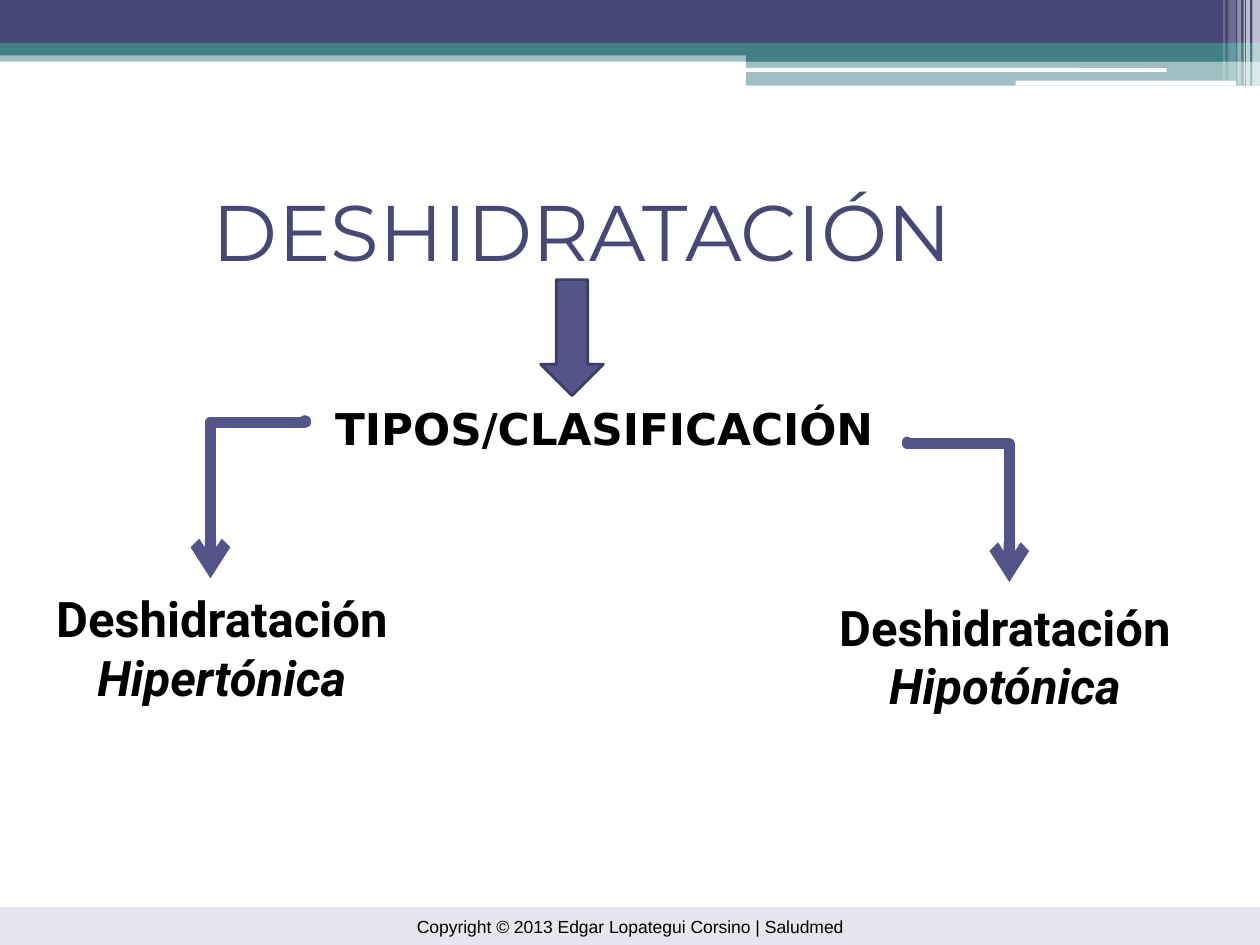
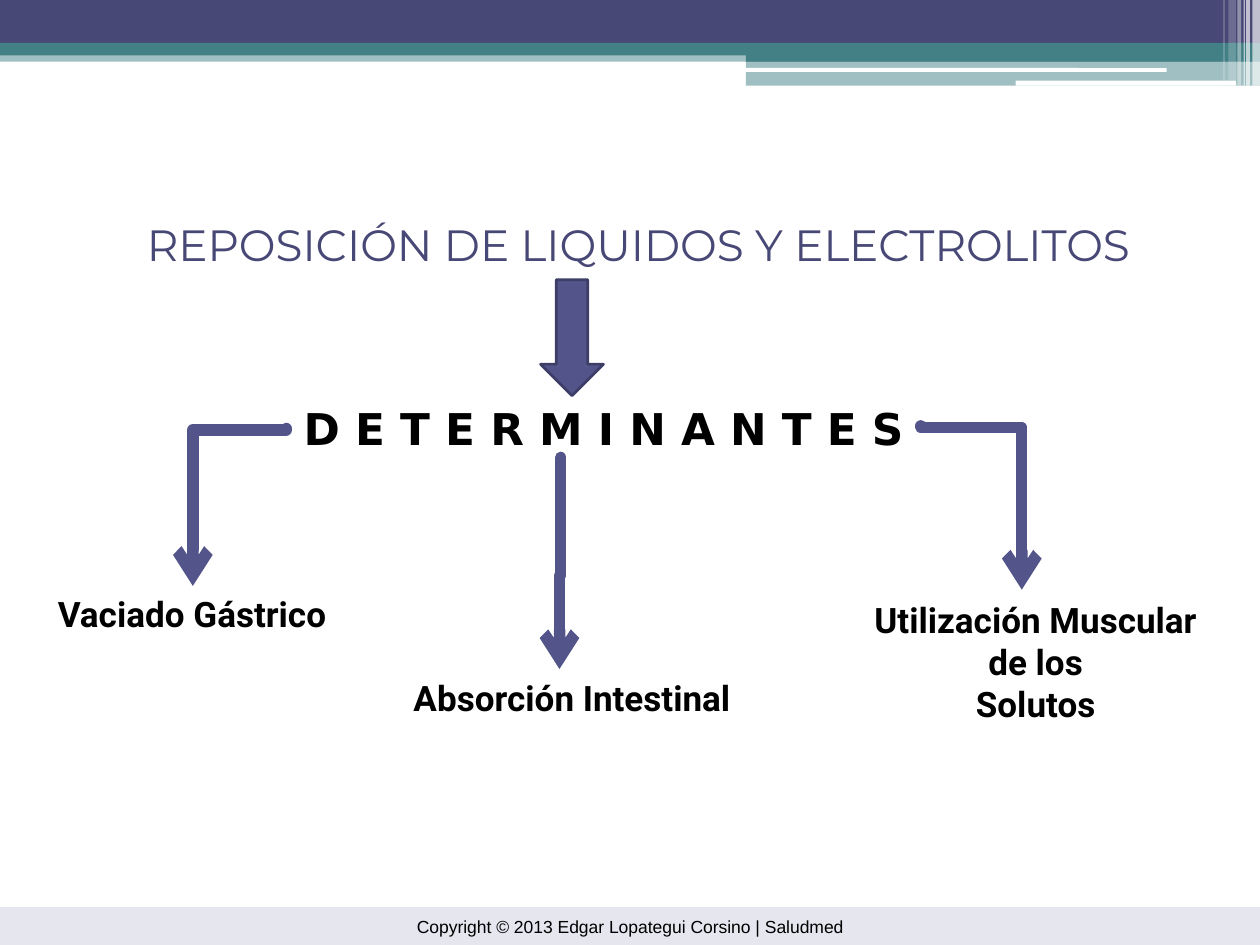
import pptx
import pptx.dml.color
import pptx.enum.shapes
import pptx.enum.text
import pptx.oxml
import pptx.oxml.ns
import pptx.util
from lxml import etree

Inches = pptx.util.Inches
Pt = pptx.util.Pt
qn = pptx.oxml.ns.qn
SHAPE = pptx.enum.shapes.MSO_SHAPE
ALIGN = pptx.enum.text.PP_ALIGN
ANCHOR = pptx.enum.text.MSO_ANCHOR
AUTO_SIZE = pptx.enum.text.MSO_AUTO_SIZE

INDIGO, TEAL, WHITE, BLACK = "484876", "438086", "FFFFFF", "000000"
ARROW, ARROW_EDGE, FOOTER_BAND = "53548A", "3D3E66", "E6E6EF"
COPYRIGHT = "Copyright © 2013 Edgar Lopategui Corsino | Saludmed"

TITLE = {"name": "Montserrat", "bold": False}
HEADING = {"name": "DejaVu Sans", "size": Pt(25), "bold": True}
BRANCH = {"name": "Roboto", "bold": True}
FOOTER = {"name": "Arial", "size": Pt(10)}

# left, top, width, height, colour, opacity in percent
BANDS = [
    (0, 0.4, 10, 0.09, TEAL, 50),
    (0, 0, 10, 0.34, INDIGO, 100),
    (0, 0.34, 10, 0.1, TEAL, 100),
    (5.92, 0.39, 4.08, 0.1, TEAL, 100),
    (5.92, 0.48, 4.08, 0.2, TEAL, 50),
]
WHITE_RULES = [(5.91, 0.54, 3.35, 0.03), (8.06, 0.64, 1.75, 0.04)]
# left, width, height, opacity in percent
CORNER_STRIPES = [
    (9.94, 0.06, 0.68, 65),
    (9.89, 0.03, 0.68, 65),
    (9.87, 0.01, 0.68, 60),
    (9.82, 0.03, 0.68, 40),
    (9.75, 0.06, 0.64, 20),
    (9.71, 0.01, 0.64, 30),
]


def rgb(hex_colour):
    return pptx.dml.color.RGBColor.from_string(hex_colour)


def add_block(slide, kind, box, colour, opacity=100):
    """Add a filled preset shape without outline or shadow."""
    block = slide.shapes.add_shape(kind, *map(Inches, box))
    block.shadow.inherit = False
    block.fill.solid()
    block.fill.fore_color.rgb = rgb(colour)
    block.line.fill.background()
    if opacity < 100:
        tint = block.element.spPr.find(".//" + qn("a:srgbClr"))
        etree.SubElement(tint, qn("a:alpha"), val=str(opacity * 1000))
    return block


def write_lines(frame, lines, style, colour=BLACK, italic_lines=()):
    """Write centred paragraphs, one for each line."""
    for number, line in enumerate(lines):
        paragraph = frame.paragraphs[0] if number == 0 else frame.add_paragraph()
        paragraph.alignment = ALIGN.CENTER
        run = paragraph.add_run()
        run.text = line
        for attribute, value in style.items():
            setattr(run.font, attribute, value)
        run.font.color.rgb = rgb(colour)
        if number in italic_lines:
            run.font.italic = True


def add_label(slide, box, lines, style, wrap=False, italic_lines=()):
    frame = slide.shapes.add_textbox(*map(Inches, box)).text_frame
    frame.word_wrap = wrap
    write_lines(frame, lines, style, italic_lines=italic_lines)


def set_title(slide, box, text, size):
    title = slide.shapes.title
    title.left, title.top, title.width, title.height = map(Inches, box)
    frame = title.text_frame
    frame.word_wrap = False
    frame.auto_size = AUTO_SIZE.NONE
    frame.vertical_anchor = ANCHOR.MIDDLE
    write_lines(frame, [text], {**TITLE, "size": Pt(size)}, INDIGO)


def add_down_arrow(slide):
    arrow = add_block(slide, SHAPE.DOWN_ARROW, (4.29, 2.22, 0.5, 0.92), ARROW)
    arrow.line.color.rgb = rgb(ARROW_EDGE)
    arrow.line.width = Pt(1.5)


def add_branch_arrow(slide, start, end, bend):
    """Draw an elbow arrow that leaves and arrives vertically.

    The elbow is laid out sideways around its centre and then turned;
    bend is the share of the drop at which it turns sideways.
    """
    (x1, y1), (x2, y2) = start, end
    drop, reach = y2 - y1, abs(x2 - x1)
    left = (x1 + x2 - drop) / 2
    top = (y1 + y2 - reach) / 2
    branch = slide.shapes.add_connector(
        pptx.enum.shapes.MSO_CONNECTOR.ELBOW,
        *map(Inches, (left, top, left + drop, top + reach)))
    branch.line.color.rgb = rgb(ARROW)
    branch.line.width = Pt(6.5)

    properties = branch.element.spPr
    transform = properties.find(qn("a:xfrm"))
    goes_right = x2 > x1
    transform.set("rot", str((270 if goes_right else 90) * 60000))
    if goes_right:
        transform.set("flipH", "1")
    geometry = properties.find(qn("a:prstGeom"))
    guides = geometry.find(qn("a:avLst"))
    if guides is None:
        guides = etree.SubElement(geometry, qn("a:avLst"))
    etree.SubElement(guides, qn("a:gd"), name="adj1",
                     fmla=f"val {round(bend * 100000)}")
    outline = properties.find(qn("a:ln"))
    outline.set("cap", "rnd")
    etree.SubElement(outline, qn("a:round"))
    etree.SubElement(outline, qn("a:tailEnd"), type="arrow")
    etree.SubElement(properties, qn("a:effectLst"))


def dress_layout(layout, slide):
    """Draw the bands and footer on a slide, then move them to its layout."""
    decor = [add_block(slide, SHAPE.RECTANGLE, band[:4], *band[4:])
             for band in BANDS]
    decor += [add_block(slide, SHAPE.ROUNDED_RECTANGLE, rule, WHITE)
              for rule in WHITE_RULES]
    decor += [add_block(slide, SHAPE.RECTANGLE, (left, 0, width, height),
                        WHITE, opacity)
              for left, width, height, opacity in CORNER_STRIPES]
    footer = add_block(slide, SHAPE.RECTANGLE, (0, 7.2, 10, 0.3), FOOTER_BAND)
    footer.text_frame.vertical_anchor = ANCHOR.MIDDLE
    write_lines(footer.text_frame, [COPYRIGHT], FOOTER)
    for block in decor + [footer]:
        layout.shapes.element.append(block.element)


def fill_dehydration(slide):
    set_title(slide, (1.36, 1.4, 6.52, 0.85), "DESHIDRATACIÓN", 45)
    add_down_arrow(slide)
    add_label(slide, (2.39, 3.14, 4.81, 0.52), ["TIPOS/CLASIFICACIÓN"], HEADING)
    add_branch_arrow(slide, (2.42, 3.34), (1.67, 4.59), 0.01)
    add_branch_arrow(slide, (7.2, 3.51), (8.01, 4.62), 0.01)
    kinds = [((0, 4.62, 3.52, 1.03), "Hipertónica"),
             ((6.34, 4.69, 3.27, 1.03), "Hipotónica")]
    for box, kind in kinds:
        add_label(slide, box, ["Deshidratación", kind],
                  {**BRANCH, "size": Pt(28)}, wrap=True, italic_lines=(1,))


def fill_replacement(slide):
    set_title(slide, (0.69, 1.68, 8.75, 0.52),
              "REPOSICIÓN DE LIQUIDOS Y ELECTROLITOS", 25)
    add_down_arrow(slide)
    add_label(slide, (2.3, 3.14, 4.98, 0.52),
              ["D E T E R M I N A N T E S"], HEADING)
    determinants = [
        ((2.27, 3.4), (1.53, 4.65), 0.01,
         (0.26, 4.65, 2.53, 0.43), ["Vaciado Gástrico"]),
        ((4.45, 3.63), (4.44, 5.31), 0.56,
         (3.03, 5.32, 3.02, 0.43), ["Absorción Intestinal"]),
        ((7.31, 3.38), (8.11, 4.68), 0.01,
         (6.72, 4.7, 3, 1.1), ["Utilización Muscular", "de los", "Solutos"]),
    ]
    for start, end, bend, box, lines in determinants:
        add_branch_arrow(slide, start, end, bend)
        add_label(slide, box, lines, {**BRANCH, "size": Pt(20)})


def main():
    deck = pptx.Presentation()
    deck.slide_width, deck.slide_height = Inches(10), Inches(7.5)
    title_only = deck.slide_layouts[5]
    dehydration = deck.slides.add_slide(title_only)
    dress_layout(title_only, dehydration)
    fill_dehydration(dehydration)
    fill_replacement(deck.slides.add_slide(title_only))
    deck.save("out.pptx")


if __name__ == "__main__":
    main()
